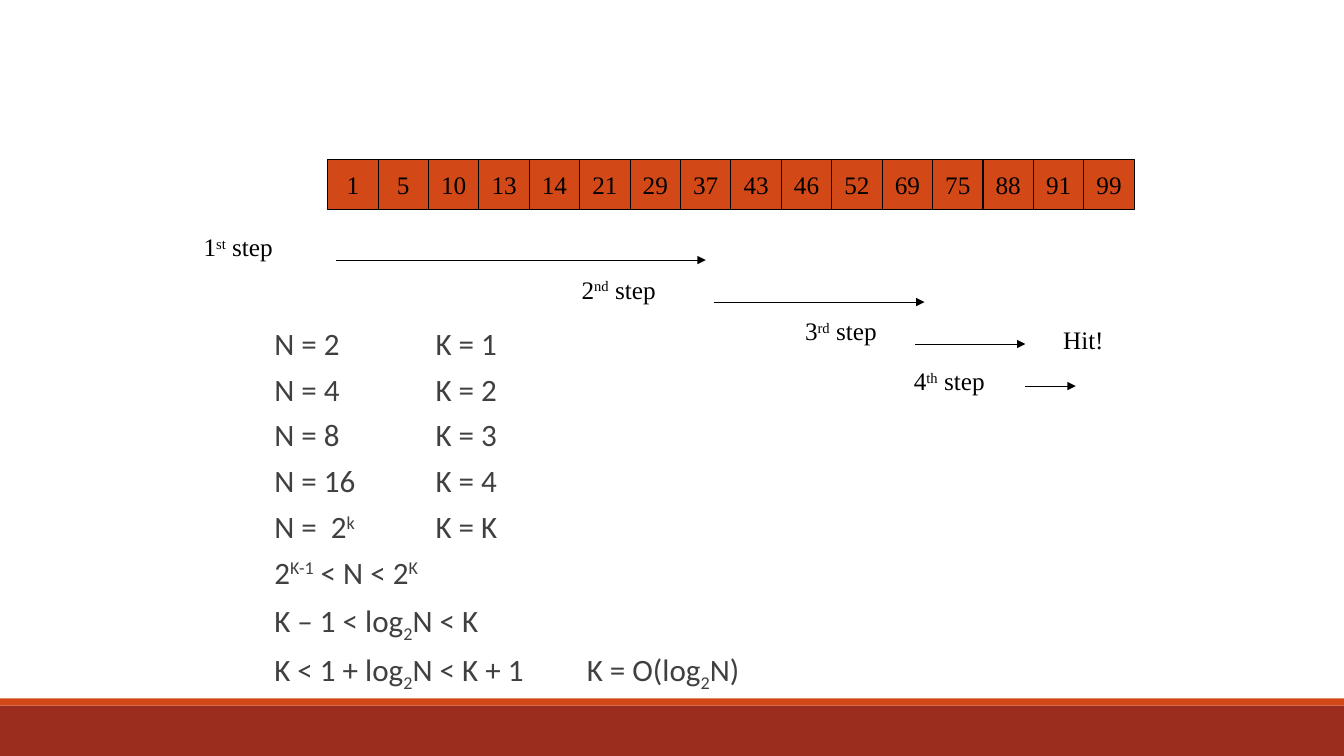
import pptx
import pptx.util
import pptx.dml.color
import pptx.enum.shapes
import pptx.enum.text
import pptx.oxml.ns
from lxml import etree

Inches = pptx.util.Inches
Pt = pptx.util.Pt
ALIGN = pptx.enum.text.PP_ALIGN

WIDTH, HEIGHT = 13.33, 7.5
CELL = 0.5
ARRAY_LEFT, ARRAY_TOP = 3.25, 1.58
SERIF, SANS = "Times New Roman", "Calibri"
BLACK, GREY, ORANGE, RED = "000000", "404040", "D34817", "9B2D1F"
BASELINES = {"^": "30000", "_": "-25000"}

VALUES = [1, 5, 10, 13, 14, 21, 29, 37, 43, 46, 52, 69, 75, 88, 91, 99]

# Label text, left, top, width, alignment; "|" parts runs, "^" raises, "_" lowers
LABELS = [
    ("1|^st| step", 1.92, 2.25, 0.91, ALIGN.LEFT),
    ("2|^nd| step", 5.67, 2.67, 0.97, ALIGN.LEFT),
    ("3|^rd| step", 7.87, 3.08, 0.94, ALIGN.CENTER),
    ("4|^th| step", 8.95, 3.58, 0.93, ALIGN.CENTER),
    ("Hit!", 10.44, 3.17, 0.61, ALIGN.CENTER),
]

# Start and end of each search step
ARROWS = [(3.33, 7), (7.08, 9.17), (9.08, 10.17), (10.17, 10.67)]
ARROW_TOP, ARROW_PITCH = 2.58, 1.25 / 3

FORMULAS = [
    "N = 2\t\tK = 1",
    "N = 4\t\tK = 2",
    "N = 8\t\tK = 3",
    "N = 16\t\tK = 4",
    "N =  2|^k|\t\tK = K",
    "2|^K-1| < N < 2|^K",
    "K – 1 < log|_2|N < K",
    "K < 1 + log|_2|N < K + 1\t\tK = O(log|_2|N)",
]


def color(value):
    return pptx.dml.color.RGBColor.from_string(value)


def write(paragraph, text, font, size, ink, align=ALIGN.LEFT):
    paragraph.alignment = align
    paragraph.font.name = font
    paragraph.font.size = Pt(size)
    paragraph.font.color.rgb = color(ink)
    for part in text.split("|"):
        run = paragraph.add_run()
        run.text = part.lstrip("^_")
        if part[0] in BASELINES:
            run._r.get_or_add_rPr().set("baseline", BASELINES[part[0]])


def add_box(slide, left, top, width, height, fill):
    shape = slide.shapes.add_shape(
        pptx.enum.shapes.MSO_SHAPE.RECTANGLE,
        Inches(left), Inches(top), Inches(width), Inches(height))
    shape.shadow.inherit = False
    shape.fill.solid()
    shape.fill.fore_color.rgb = color(fill)
    shape.line.fill.background()
    return shape


def add_cell(slide, column, value):
    cell = add_box(slide, ARRAY_LEFT + column * CELL, ARRAY_TOP, CELL, CELL, ORANGE)
    cell.line.color.rgb = color(BLACK)
    cell.line.width = Pt(0.75)
    frame = cell.text_frame
    frame.word_wrap = False
    frame.vertical_anchor = pptx.enum.text.MSO_ANCHOR.MIDDLE
    write(frame.paragraphs[0], str(value), SERIF, 18, BLACK, ALIGN.CENTER)


def add_label(slide, text, left, top, width, align):
    label = slide.shapes.add_textbox(
        Inches(left), Inches(top), Inches(width), Inches(0.4))
    frame = label.text_frame
    frame.word_wrap = False
    frame.auto_size = pptx.enum.text.MSO_AUTO_SIZE.SHAPE_TO_FIT_TEXT
    write(frame.paragraphs[0], text, SERIF, 18, BLACK, align)


def add_arrow(slide, start, end, top):
    arrow = slide.shapes.add_connector(
        pptx.enum.shapes.MSO_CONNECTOR.STRAIGHT,
        Inches(start), Inches(top), Inches(end), Inches(top))
    arrow.line.color.rgb = color(BLACK)
    arrow.line.width = Pt(0.75)
    qn = pptx.oxml.ns.qn
    etree.SubElement(arrow.line._get_or_add_ln(), qn("a:tailEnd"), type="triangle")
    etree.SubElement(arrow._element.spPr, qn("a:effectLst"))


def add_formulas(slide):
    box = slide.shapes.add_textbox(
        Inches(2.72), Inches(3.27), Inches(7.25), Inches(3.58))
    frame = box.text_frame
    frame.word_wrap = True
    frame.margin_left = frame.margin_right = 0
    for index, text in enumerate(FORMULAS):
        paragraph = frame.add_paragraph() if index else frame.paragraphs[0]
        write(paragraph, text, SANS, 22.2, GREY)
        paragraph.line_spacing = 0.7
        paragraph.space_before = Pt(12)
        paragraph.space_after = Pt(2)
        properties = paragraph._p.get_or_add_pPr()
        properties.set("marL", str(Inches(0.1)))
        properties.set("indent", str(Inches(-0.1)))


def main():
    presentation = pptx.Presentation()
    presentation.slide_width = Inches(WIDTH)
    presentation.slide_height = Inches(HEIGHT)
    slide = presentation.slides.add_slide(presentation.slide_layouts[6])

    # Footer bands
    add_box(slide, 0, 7, WIDTH, 0.5, RED)
    add_box(slide, 0, 6.93, WIDTH, 0.07, ORANGE)

    # Complexity derivation
    add_formulas(slide)

    # Sorted array
    for column, value in enumerate(VALUES):
        add_cell(slide, column, value)

    # Search steps
    for step, (start, end) in enumerate(ARROWS):
        add_arrow(slide, start, end, ARROW_TOP + step * ARROW_PITCH)
    for label in LABELS:
        add_label(slide, *label)

    presentation.save("out.pptx")


if __name__ == "__main__":
    main()
